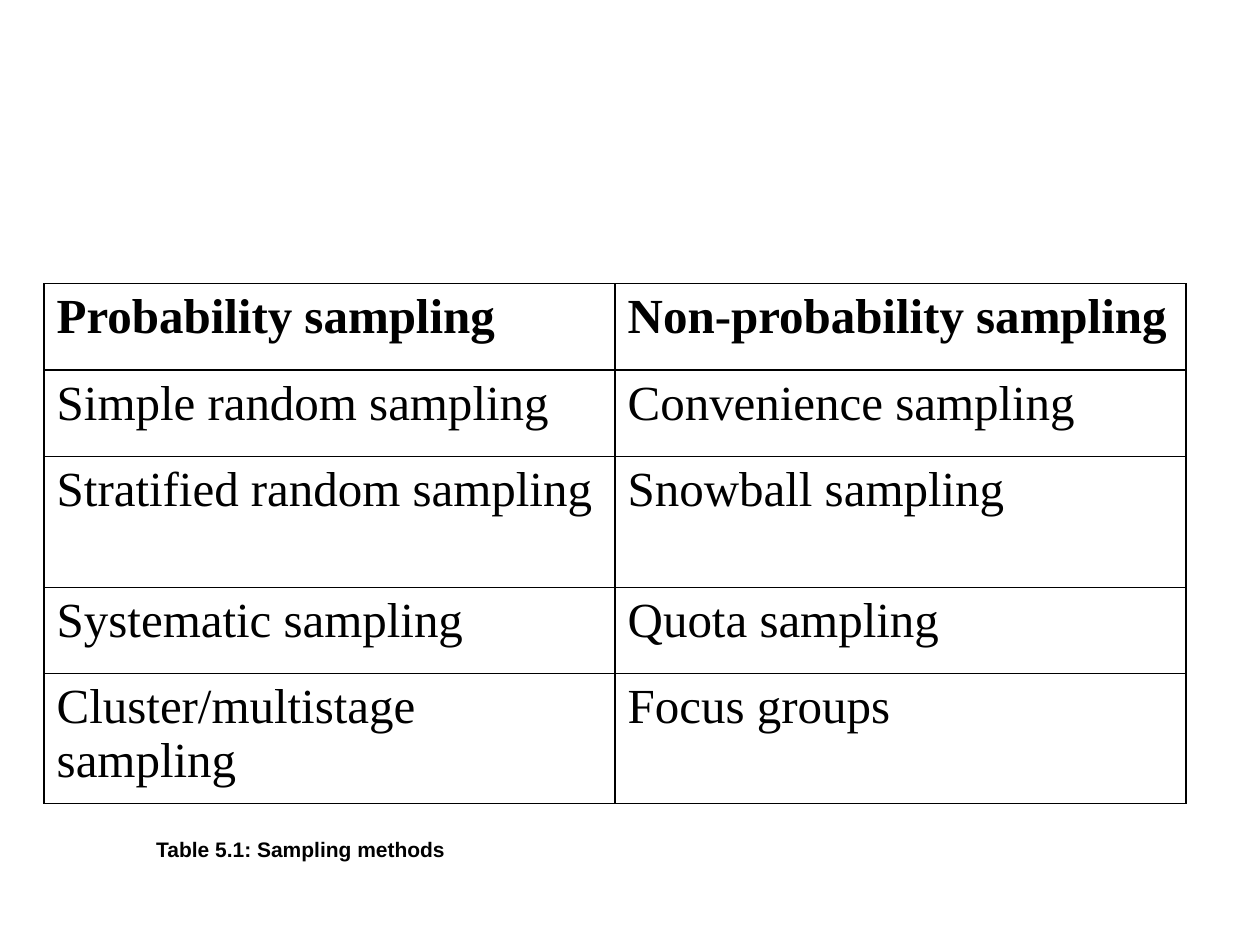
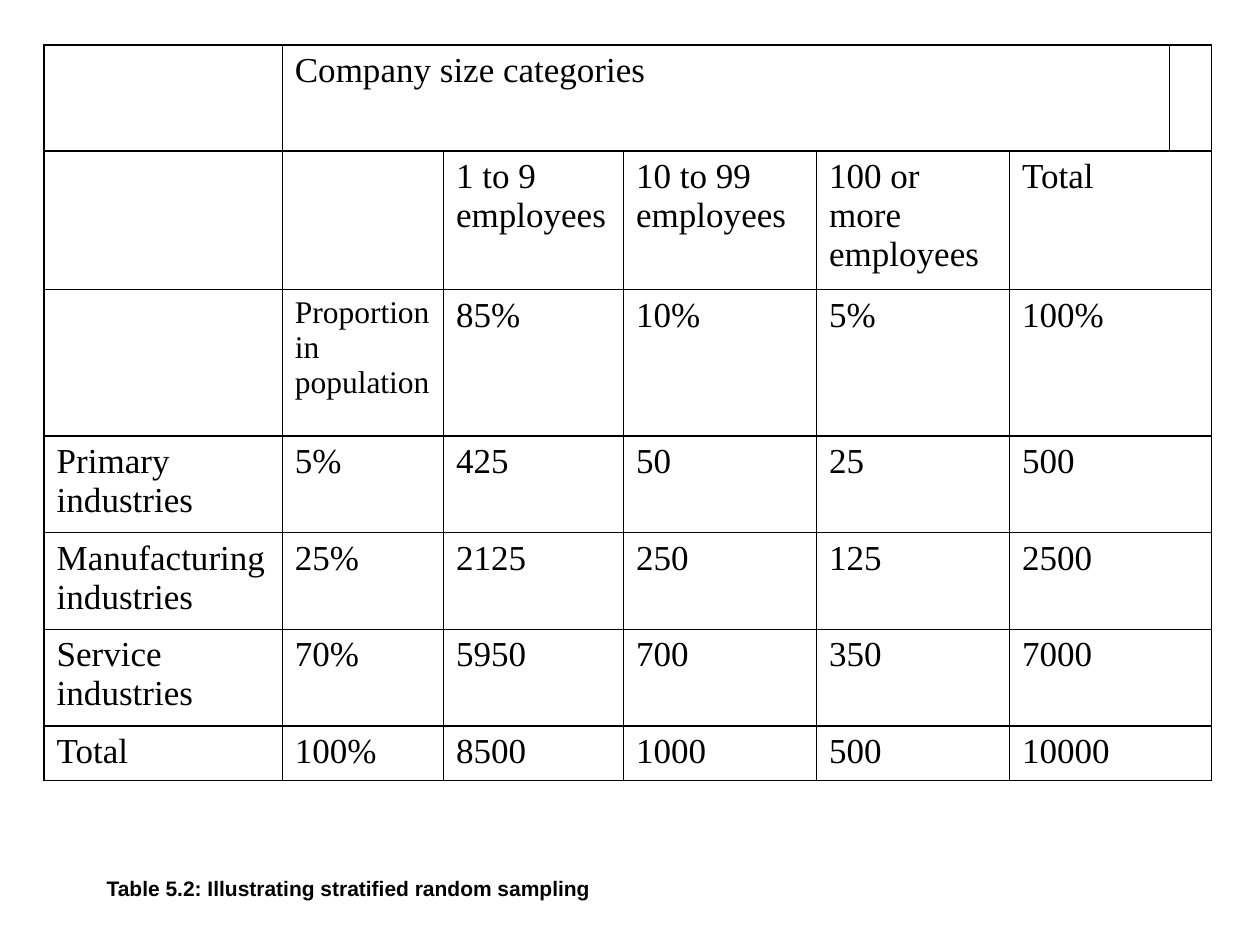
from lxml import etree
from pptx import Presentation
from pptx.dml.color import RGBColor
from pptx.enum.text import MSO_ANCHOR, MSO_AUTO_SIZE
from pptx.oxml.ns import qn
from pptx.util import Cm, Pt

MIDDLE = MSO_ANCHOR.MIDDLE
GROW = MSO_AUTO_SIZE.SHAPE_TO_FIT_TEXT

COLOURS = {"ink": "000000"}
TABLE_FONT = {"name": "Times New Roman", "bold": False}
CAPTION_FONT = {"name": "Arial", "size": Pt(12), "bold": True}
TABLE_LEFT = 0.89
CAPTION_HEIGHT = 0.76
BLANK_LAYOUT = 6

# In the rows, None marks a cell that the cell to its left spreads over.
# Lengths are centimetres; special_fonts is keyed by (row, column).
SLIDES = [
    {
        "rows": [
            ["Probability sampling", "Non-probability sampling"],
            ["Simple random sampling", "Convenience sampling"],
            ["Stratified random sampling", "Snowball sampling"],
            ["Systematic sampling", "Quota sampling"],
            ["Cluster/multistage sampling", "Focus groups"],
        ],
        "top": 5.72,
        "widths": [11.51] * 2,
        "heights": [1.74, 1.74, 2.64, 1.74, 2.62],
        "size": 28,
        "special_fonts": {(0, 0): {"bold": True}, (0, 1): {"bold": True}},
        "caption": "Table 5.1: Sampling methods",
        "caption_place": (2.9, 16.74, 6.38),
    },
    {
        "rows": [
            ["", "Company size categories", None, None, None, None, ""],
            ["", "", "1 to 9 employees", "10 to 99 employees",
             "100 or more employees", "Total", None],
            ["", "Proportion in population", "85%", "10%", "5%", "100%", None],
            ["Primary industries", "5%", "425", "50", "25", "500", None],
            ["Manufacturing industries", "25%", "2125", "250", "125", "2500", None],
            ["Service industries", "70%", "5950", "700", "350", "7000", None],
            ["Total", "100%", "8500", "1000", "500", "10000", None],
        ],
        "top": 0.91,
        "widths": [4.8, 3.25, 3.63, 3.89, 3.89, 3.23, 0.84],
        "heights": [2.13, 2.79, 2.95, 1.95, 1.95, 1.95, 1.1],
        "size": 20,
        "special_fonts": {(2, 1): {"size": Pt(18)}},
        "caption": "Table 5.2: Illustrating stratified random sampling",
        "caption_place": (1.9, 17.53, 10.31),
    },
]


def format_font(font, values):
    for attribute, value in values.items():
        setattr(font, attribute, value)
    font.color.rgb = RGBColor.from_string(COLOURS["ink"])


def rule_cell(cell, sides):
    """Draw the cell's borders on the given sides, a subset of LRTB."""
    properties = cell._tc.get_or_add_tcPr()
    for side in sides:
        border = etree.SubElement(properties, qn(f"a:ln{side}"), w=str(Pt(1)))
        fill = etree.SubElement(border, qn("a:solidFill"))
        etree.SubElement(fill, qn("a:srgbClr"), val=COLOURS["ink"])


def add_ruled_table(slide, content):
    rows, widths, heights = content["rows"], content["widths"], content["heights"]
    table = slide.shapes.add_table(
        len(rows), len(widths), Cm(TABLE_LEFT), Cm(content["top"]),
        Cm(sum(widths)), Cm(sum(heights))).table
    table.first_row = table.horz_banding = False
    for column, width in zip(table.columns, widths):
        column.width = Cm(width)
    for row, height in zip(table.rows, heights):
        row.height = Cm(height)

    for r, texts in enumerate(rows):
        for c, text in enumerate(texts):
            cell = table.cell(r, c)
            span_end = c
            while span_end + 1 < len(texts) and texts[span_end + 1] is None:
                span_end += 1
            if text is None:
                rule_cell(cell, "RTB" if span_end == c else "TB")
            else:
                rule_cell(cell, "LRTB")
                if span_end > c:
                    cell.merge(table.cell(r, span_end))
            cell.fill.background()
            if text:
                cell.text = text
                font = {**TABLE_FONT, "size": Pt(content["size"]),
                        **content["special_fonts"].get((r, c), {})}
                format_font(cell.text_frame.paragraphs[0].runs[0].font, font)


def add_caption(slide, text, place):
    left, top, width = place
    frame = slide.shapes.add_textbox(
        Cm(left), Cm(top), Cm(width), Cm(CAPTION_HEIGHT)).text_frame
    frame.text = text
    frame.word_wrap = False
    frame.auto_size = GROW
    frame.vertical_anchor = MIDDLE
    format_font(frame.paragraphs[0].runs[0].font, CAPTION_FONT)


def main():
    deck = Presentation()
    deck.slide_width, deck.slide_height = Cm(25.4), Cm(19.05)
    for content in SLIDES:
        slide = deck.slides.add_slide(deck.slide_layouts[BLANK_LAYOUT])
        add_ruled_table(slide, content)
        add_caption(slide, content["caption"], content["caption_place"])
    deck.save("out.pptx")


if __name__ == "__main__":
    main()
